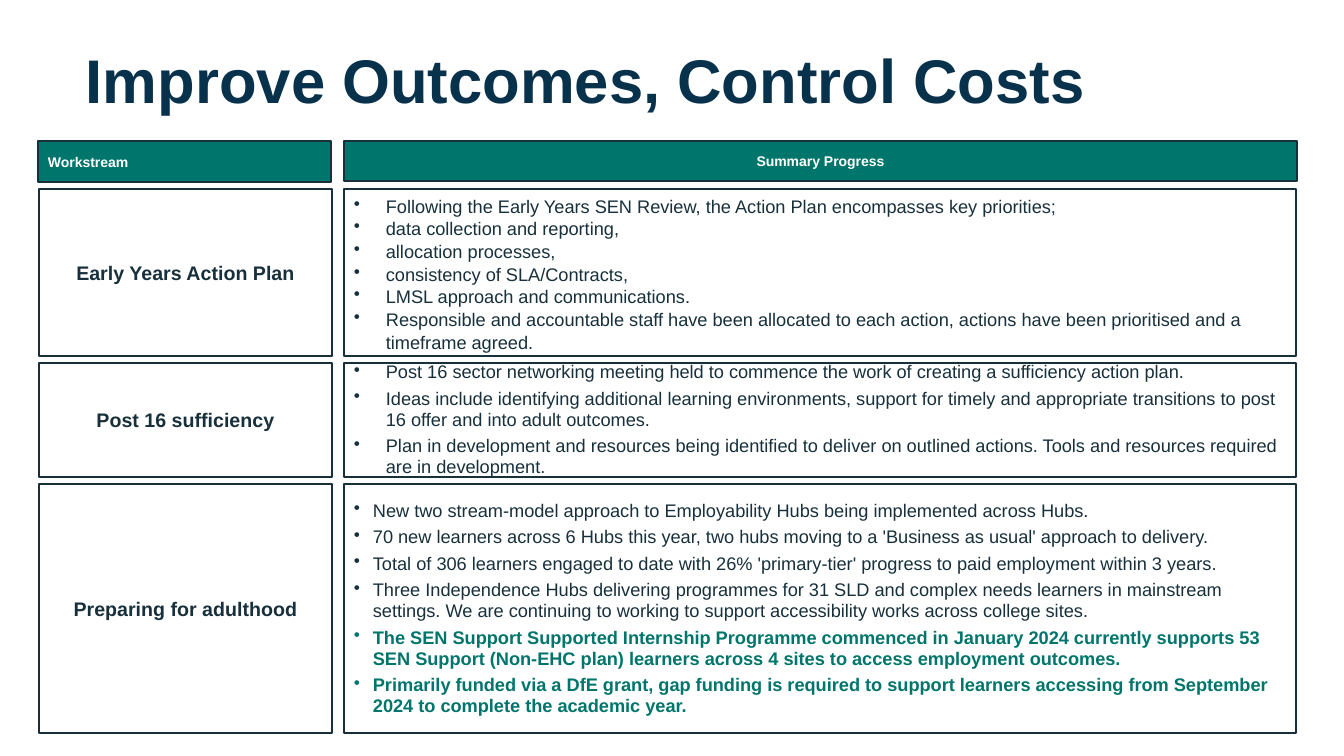
"""Build the Improve Outcomes, Control Costs progress slide."""
from pptx import Presentation
from pptx import util as u
from pptx.dml.color import RGBColor
from pptx.enum import shapes, text
from pptx.oxml import xmlchemy as x

PX = 914400 / 100.8
NAVY = RGBColor(0x08, 0x31, 0x4C)
INK = RGBColor(0x17, 0x30, 0x3B)
TEAL = RGBColor(0x00, 0x75, 0x6B)
WHITE = RGBColor(0xFF, 0xFF, 0xFF)
LEFT, CENTER = text.PP_ALIGN.LEFT, text.PP_ALIGN.CENTER
TOP, MIDDLE = text.MSO_ANCHOR.TOP, text.MSO_ANCHOR.MIDDLE

prs = Presentation()
prs.slide_width, prs.slide_height = round(1344 * PX), round(756 * PX)
s = prs.slides.add_slide(prs.slide_layouts[6])


def add_box(at, fill=None, anchor=MIDDLE):
    box = [round(n * PX) for n in at]
    if fill is None:
        sp = s.shapes.add_textbox(*box)
    else:
        sp = s.shapes.add_shape(shapes.MSO_SHAPE.RECTANGLE, *box)
        sp.shadow.inherit = False
        sp.fill.solid()
        sp.fill.fore_color.rgb = fill
        sp.line.color.rgb = INK
        sp.line.width = u.Pt(1)
    tf = sp.text_frame
    tf.word_wrap = True
    tf.vertical_anchor = anchor
    return tf


def write(p, words, size, color, bold=True, indent=0, **fmt):
    if indent:
        pPr = p._p.get_or_add_pPr()
        pPr.set("marL", str(round(indent * PX)))
        pPr.set("indent", str(round(-indent * PX)))
        bullet = x.OxmlElement("a:buChar")
        bullet.set("char", "•")
        pPr.append(bullet)
    for name, value in fmt.items():
        setattr(p, name, value)
    r = p.add_run()
    r.text = words
    for name, value in {"name": "Arial", "size": u.Pt(size), "bold": bold}.items():
        setattr(r.font, name, value)
    r.font.color.rgb = color


tf = add_box((76, 40, 1176, 88))
write(tf.paragraphs[0], "Improve Outcomes, Control Costs", 44, NAVY, line_spacing=0.9)

for label, at, align in [
    ("Workstream", (38, 141, 293, 41), LEFT),
    ("Summary Progress", (344, 141, 953, 40), CENTER),
]:
    tf = add_box(at, TEAL)
    write(tf.paragraphs[0], label, 10, WHITE, alignment=align)

LOOSE = {"line_spacing": 1.04}
TIGHT = {"line_spacing": 0.95, "space_after": u.Pt(4.2)}
rows = [
    ("Early Years Action Plan", 167, TOP, 32, LOOSE, [
        "Following the Early Years SEN Review, the Action Plan encompasses key priorities;",
        "data collection and reporting,",
        "allocation processes,",
        "consistency of SLA/Contracts,",
        "LMSL approach and communications.",
        "Responsible and accountable staff have been allocated to each action, actions have been "
        "prioritised and a timeframe agreed.",
    ], []),
    ("Post 16 sufficiency", 114, MIDDLE, 32, TIGHT, [
        "Post 16 sector networking meeting held to commence the work of creating a sufficiency "
        "action plan.",
        "Ideas include identifying additional learning environments, support for timely and "
        "appropriate transitions to post 16 offer and into adult outcomes.",
        "Plan in development and resources being identified to deliver on outlined actions. "
        "Tools and resources required are in development.",
    ], []),
    ("Preparing for adulthood", 249, MIDDLE, 19, TIGHT, [
        "New two stream-model approach to Employability Hubs being implemented across Hubs.",
        "70 new learners across 6 Hubs this year, two hubs moving to a 'Business as usual' "
        "approach to delivery.",
        "Total of 306 learners engaged to date with 26% 'primary-tier' progress to paid "
        "employment within 3 years.",
        "Three Independence Hubs delivering programmes for 31 SLD and complex needs learners in "
        "mainstream settings. We are continuing to working to support accessibility works across "
        "college sites.",
    ], [
        "The SEN Support Supported Internship Programme commenced in January 2024 currently "
        "supports 53 SEN Support (Non-EHC plan) learners across 4 sites to access employment "
        "outcomes.",
        "Primarily funded via a DfE grant, gap funding is required to support learners accessing "
        "from September 2024 to complete the academic year.",
    ]),
]

top = 189
for label, height, anchor, indent, spacing, points, highlights in rows:
    tf = add_box((39, top, 293, height), WHITE)
    write(tf.paragraphs[0], label, 14, INK, alignment=CENTER)
    tf = add_box((344, top, 952, height), WHITE, anchor)
    for i, point in enumerate(points + highlights):
        p = tf.add_paragraph() if i else tf.paragraphs[0]
        bold = i >= len(points)
        write(p, point, 13, TEAL if bold else INK, bold, indent, alignment=LEFT, **spacing)
    top += height + 7

prs.save("out.pptx")
